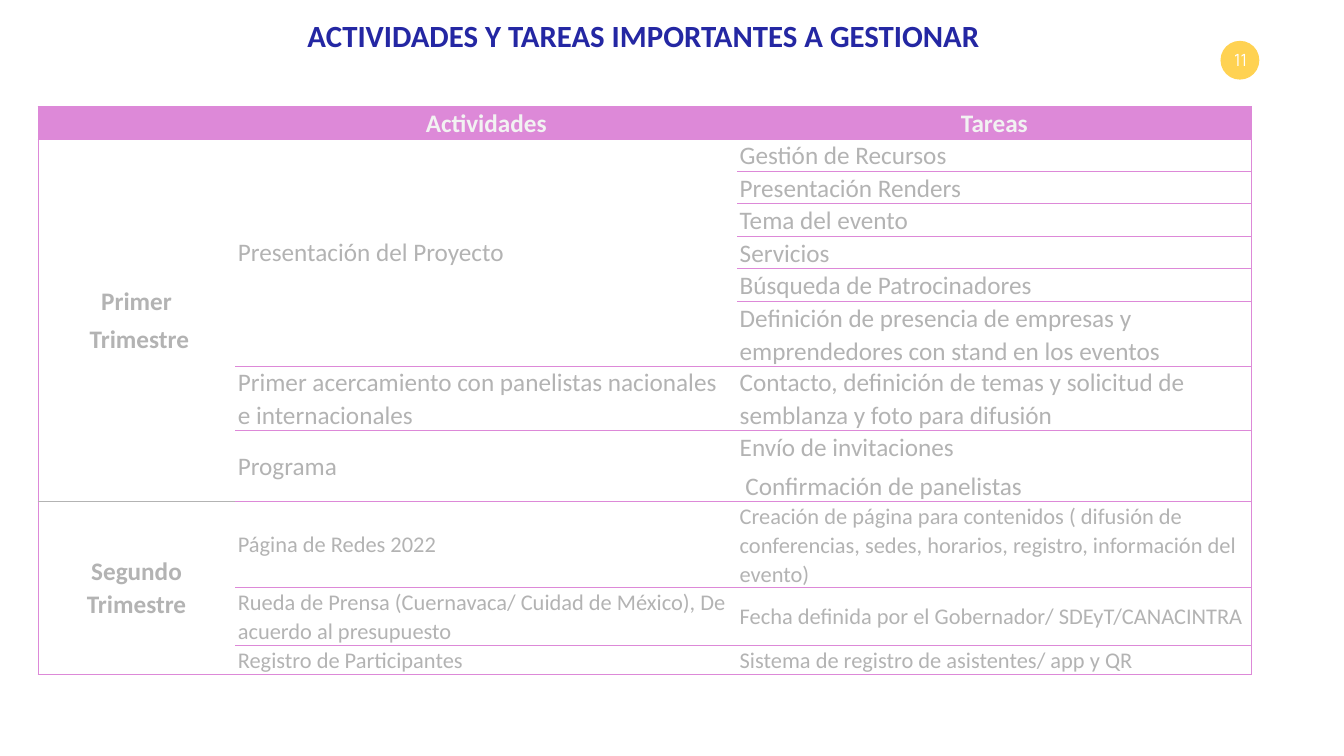
import pptx
import pptx.util
import pptx.dml.color
import pptx.enum.shapes
import pptx.enum.text
import pptx.oxml
import pptx.oxml.ns

RGB = pptx.dml.color.RGBColor
ALIGN = pptx.enum.text.PP_ALIGN
ANCHOR = pptx.enum.text.MSO_ANCHOR
FIT = pptx.enum.text.MSO_AUTO_SIZE

PINK = RGB(0xDD, 0x89, 0xD8)
GRAY = RGB(0xB3, 0xB3, 0xB3)
PALE = RGB(0xF2, 0xF2, 0xF2)
NAVY = RGB(0x24, 0x27, 0xA3)
GOLD = RGB(0xFF, 0xD2, 0x52)
WHITE = RGB(0xFF, 0xFF, 0xFF)

WIDE, HIGH = pptx.util.Inches(26.66), pptx.util.Inches(15)

# Table grid: relative column widths, and row heights in text lines
COLS = [3.92, 9.96, 10.21]
ROWS = [1] * 6 + [2, 2, 2.15, 2.65, 1.78, 0.9]
HEADS = ["", "Actividades", "Tareas"]
# Quarter: lines, text size, then each activity with one entry per task row
TERMS = [
    (["Primer", " Trimestre"], 36, [
        ("Presentación del Proyecto", [
            ["Gestión de Recursos"],
            ["Presentación Renders"],
            ["Tema del evento"],
            ["Servicios"],
            ["Búsqueda de Patrocinadores"],
            ["Definición de presencia de empresas y emprendedores "
             "con stand en los eventos"]]),
        ("Primer acercamiento con panelistas nacionales e internacionales", [
            ["Contacto, definición de temas y solicitud de semblanza "
             "y foto para difusión"]]),
        ("Programa", [
            ["Envío de invitaciones", " Confirmación de panelistas"]]),
    ]),
    (["Segundo Trimestre"], 32, [
        ("Página de Redes 2022", [
            ["Creación de página para contenidos ( difusión de conferencias, "
             "sedes, horarios, registro, información del evento)"]]),
        ("Rueda de Prensa (Cuernavaca/ Cuidad de México), "
         "De acuerdo al presupuesto", [
             ["Fecha definida por el Gobernador/ SDEyT/CANACINTRA"]]),
        ("Registro de Participantes", [
            ["Sistema de registro de asistentes/ app y QR"]]),
    ]),
]


def area(left, top, width, height):
    """Turn percentages of the slide into lengths."""
    return [round(share * side / 100) for share, side in
            zip((left, top, width, height), (WIDE, HIGH, WIDE, HIGH))]


def write(frame, lines, size=36, color=GRAY, bold=False, align=ALIGN.LEFT,
          face="Calibri", lead=None, after=None):
    for i, line in enumerate(lines):
        para = frame.paragraphs[0] if i == 0 else frame.add_paragraph()
        para.alignment = align
        para.line_spacing = lead
        para.space_after = after
        run = para.add_run()
        run.text = line
        font = run.font
        font.name, font.size, font.bold = face, pptx.util.Pt(size), bold
        font.color.rgb = color


def fill_cell(cell, lines, anchor=ANCHOR.MIDDLE, **form):
    cell.vertical_anchor = anchor
    write(cell.text_frame, lines, lead=1.07, after=pptx.util.Pt(8), **form)


def edge(cell, **sides):
    """Draw the named sides as (colour, points) and clear the others."""
    props = cell._tc.get_or_add_tcPr()
    names = pptx.oxml.ns.nsdecls("a")
    for i, side in enumerate("LRTB"):
        color, width = sides.get(side, (None, 0))
        paint = (f'<a:solidFill><a:srgbClr val="{color}"/></a:solidFill>'
                 if color else "<a:noFill/>")
        props.insert(i, pptx.oxml.parse_xml(
            f'<a:ln{side} {names} w="{int(pptx.util.Pt(width))}">'
            f'{paint}</a:ln{side}>'))


def add_title(slide, box):
    title = slide.shapes.title
    title.left, title.top, title.width, title.height = box
    frame = title.text_frame
    frame.auto_size = FIT.SHAPE_TO_FIT_TEXT
    frame.vertical_anchor = ANCHOR.TOP
    write(frame, ["ACTIVIDADES Y TAREAS IMPORTANTES A GESTIONAR"],
          size=44, color=NAVY, bold=True, align=ALIGN.CENTER)


def add_badge(slide, disc, box):
    oval = pptx.enum.shapes.MSO_SHAPE.OVAL
    back = slide.shapes.add_shape(oval, *disc)
    back.fill.solid()
    back.fill.fore_color.rgb = GOLD
    page = slide.shapes.add_shape(oval, *box)
    page.fill.background()
    for shape in (back, page):
        shape.line.fill.background()
        shape.shadow.inherit = False
    frame = page.text_frame
    frame.word_wrap = False
    frame.vertical_anchor = ANCHOR.MIDDLE
    write(frame, ["11"], size=24, color=WHITE, align=ALIGN.CENTER,
          face="Manrope")


def join(table, first, last, col, T, B, **sides):
    """Merge a column's rows and outline the merged block."""
    for row in range(first, last + 1):
        ends = dict(sides)
        if row == first:
            ends["T"] = T
        if row in (first, last):
            ends["B"] = B
        edge(table.cell(row, col), **ends)
    if last > first:
        table.cell(first, col).merge(table.cell(last, col))


def add_plan(slide, box):
    table = slide.shapes.add_table(len(ROWS), len(COLS), *box).table
    table.horz_banding = False
    for col, share in zip(table.columns, COLS):
        col.width = round(box[2] * share / sum(COLS))
    for row, share in zip(table.rows, ROWS):
        row.height = round(box[3] * share / sum(ROWS))

    # Plain cells with tight margins
    for cell in table.iter_cells():
        cell.margin_left = cell.margin_right = pptx.util.Inches(0.05)
        cell.margin_top = cell.margin_bottom = 0
        cell.fill.background()

    # Header row
    line = (PINK, 0.5)
    outer = [{"L": line}, {}, {"R": line}]
    for i, head in enumerate(HEADS):
        cell = table.cell(0, i)
        cell.fill.solid()
        cell.fill.fore_color.rgb = PINK
        edge(cell, T=line, B=line, **outer[i])
        if head:
            fill_cell(cell, [head], color=PALE, bold=True, align=ALIGN.CENTER,
                      anchor=ANCHOR.BOTTOM if i == 2 else ANCHOR.MIDDLE)

    # Quarters, their activities and tasks
    row = 1
    for name, size, acts in TERMS:
        first = row
        for act, tasks in acts:
            start = row
            for task in tasks:
                cell = table.cell(row, 2)
                low = len(tasks) > 1 or row == len(ROWS) - 1
                fill_cell(cell, task, size=size,
                          anchor=ANCHOR.BOTTOM if low else ANCHOR.MIDDLE)
                edge(cell, T=line, R=line, B=line)
                row += 1
            fill_cell(table.cell(start, 1), [act], size=size)
            join(table, start, row - 1, 1, T=line, B=line)
        fill_cell(table.cell(first, 0), name, bold=True, align=ALIGN.CENTER)
        rule = (GRAY, 1)
        join(table, first, row - 1, 0, L=line,
             T=line if first == 1 else rule,
             B=line if row == len(ROWS) else rule)


def main():
    deck = pptx.Presentation()
    deck.slide_width, deck.slide_height = WIDE, HIGH
    slide = deck.slides.add_slide(deck.slide_layouts[5])
    add_badge(slide, area(90.81, 5.4, 2.89, 5.13), area(90.81, 5.27, 3, 5.33))
    add_plan(slide, area(2.81, 14.07, 90.32, 75))
    add_title(slide, area(12.98, 1.93, 69.84, 5.6))
    deck.save("out.pptx")


if __name__ == "__main__":
    main()
